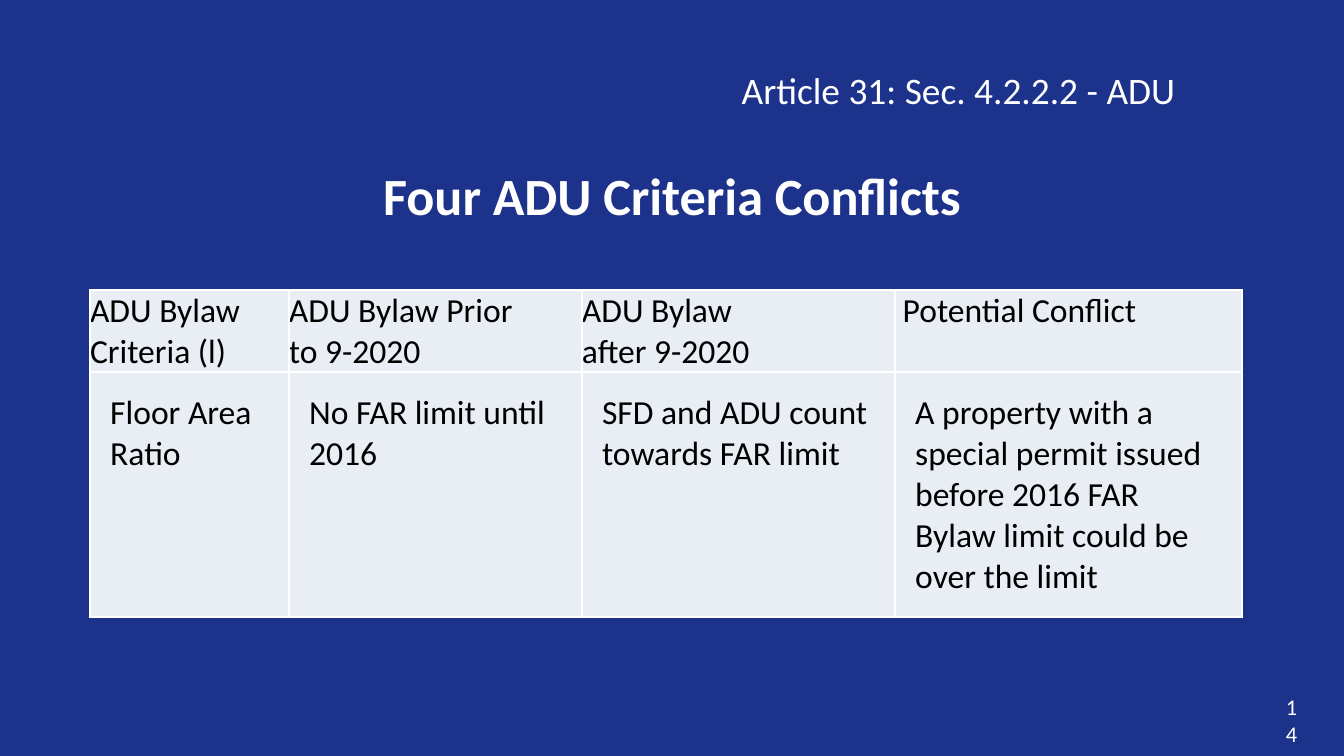
from lxml.etree import SubElement as Sub
from pptx import Presentation
from pptx.dml.color import RGBColor as RGB
from pptx.enum.text import MSO_ANCHOR as Anchor, PP_ALIGN as Align
from pptx.oxml.ns import qn
from pptx.util import Inches, Pt

HUES = {"back": "1D328B", "light": "FFFFFF", "dark": "000000", "cell": "E9EDF4"}
WIDTHS = [1.48, 2.18, 2.33, 2.58]
ROWS = [
    (0.61, 0, ["ADU Bylaw Criteria (l)", "ADU Bylaw Prior\nto 9-2020",
               "ADU Bylaw\nafter 9-2020", " Potential Conflict"]),
    (1.82, 0.15, ["Floor Area Ratio", "No FAR limit until 2016",
                  "SFD and ADU count towards FAR limit",
                  "A property with a special permit issued before 2016 FAR "
                  "Bylaw limit could be over the limit"]),
]


def hue(name):
    return RGB.from_string(HUES[name])


def write(frame, text, size, color, align=Align.LEFT, bold=False):
    frame.text = text
    frame.word_wrap = True
    for para in frame.paragraphs:
        para.alignment = align
        font = para.font
        font.name, font.size, font.bold = "Calibri", Pt(size), bold
        font.color.rgb = hue(color)


def add_title(slide, box, text):
    title = slide.shapes.title
    title.left, title.top, title.width, title.height = map(Inches, box)
    title.text_frame.vertical_anchor = Anchor.MIDDLE
    write(title.text_frame, text, 28, "light", Align.CENTER, True)


def add_label(slide, box, text, size, align=Align.LEFT, anchor=Anchor.TOP):
    frame = slide.shapes.add_textbox(*map(Inches, box)).text_frame
    frame.vertical_anchor = anchor
    write(frame, text, size, "light", align)


def add_edges(cell):
    props = cell._tc.get_or_add_tcPr()
    for side in "LRTB":
        line = Sub(props, qn(f"a:ln{side}"), w=str(Pt(1)))
        Sub(Sub(line, qn("a:solidFill")), qn("a:srgbClr"), val=HUES["light"])


def add_grid(slide, box):
    table = slide.shapes.add_table(len(ROWS), len(WIDTHS), *map(Inches, box)).table
    for col, width in zip(table.columns, WIDTHS):
        col.width = Inches(width)
    for row, (height, inset, texts) in zip(table.rows, ROWS):
        row.height = Inches(height)
        for cell, text in zip(row.cells, texts):
            add_edges(cell)
            cell.fill.solid()
            cell.fill.fore_color.rgb = hue("cell")
            cell.margin_left = cell.margin_right = Inches(inset)
            cell.margin_top = cell.margin_bottom = Inches(inset)
            write(cell.text_frame, text, 18, "dark")


def main():
    deck = Presentation()
    deck.slide_width = Inches(10)
    deck.slide_height = deck.slide_width * 9 // 16
    slide = deck.slides.add_slide(deck.slide_layouts[5])
    fill = slide.background.fill
    fill.solid()
    fill.fore_color.rgb = hue("back")
    add_title(slide, (0.5, 0.98, 9, 0.94), "Four ADU Criteria Conflicts")
    add_label(slide, (9.42, 5.21, 0.33, 0.3), "14", 12, Align.RIGHT, Anchor.MIDDLE)
    add_grid(slide, (0.67, 2.16, sum(WIDTHS), 2.43))
    add_label(slide, (5.42, 0.45, 4.08, 0.44), "Article 31: Sec. 4.2.2.2 - ADU", 20)
    deck.save("out.pptx")


if __name__ == "__main__":
    main()
